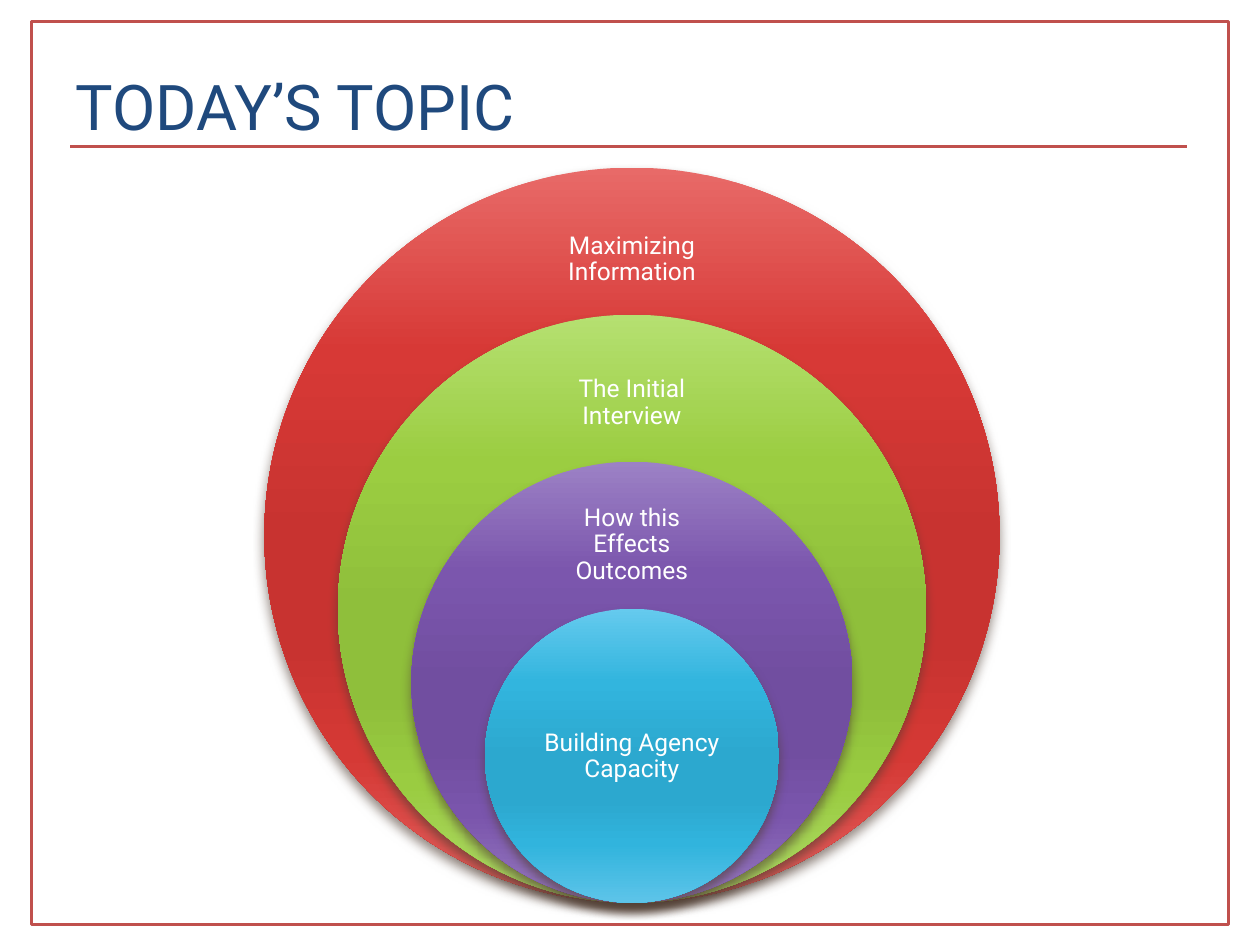
"""Build the "Today's topic" slide: four nested circles that share a base point."""
from dataclasses import dataclass

from lxml import etree
from pptx import Presentation
from pptx.dml import color
from pptx.enum import shapes, text
from pptx.oxml import ns
from pptx.util import Cm, Pt


@dataclass(frozen=True)
class Theme:
    """Colours, font and type sizes of the slide."""
    font: str = "Roboto"
    accent: str = "C0504D"
    heading: str = "1F497D"
    label: str = "FFFFFF"
    shade: str = "4E3B30"
    heading_size: int = 36
    label_size: int = 14
    stops: tuple = (0, 25, 50, 65, 80, 100)


def rgb(value):
    """Turn a hex value into a colour."""
    return color.RGBColor.from_string(value)


def assign(target, values):
    """Set every attribute in a dict of format values."""
    for name, value in values.items():
        setattr(target, name, value)


def child(parent, tag, **attributes):
    """Append a drawing element with its attributes."""
    return etree.SubElement(parent, ns.qn(tag), {key: str(value) for key, value in attributes.items()})


class TopicSlide:
    """Hold the theme and the current slide, and draw each kind of element."""

    def __init__(self, deck, theme):
        self.theme = theme
        self.slide = deck.slides.add_slide(deck.slide_layouts[5])

    def outline(self, target, width):
        """Give a shape or connector the accent line."""
        target.line.color.rgb = rgb(self.theme.accent)
        target.line.width = Pt(width)

    def fill_text(self, frame, words, size, ink, paragraph_format):
        """Put one formatted paragraph in a text frame."""
        assign(frame, {"word_wrap": True, "vertical_anchor": text.MSO_ANCHOR.MIDDLE})
        paragraph = frame.paragraphs[0]
        assign(paragraph, paragraph_format)
        run = paragraph.add_run()
        run.text = words
        assign(run.font, {"name": self.theme.font, "size": Pt(size)})
        run.font.color.rgb = rgb(ink)

    def title(self, words, left, top, width, height):
        """Place and fill the title placeholder."""
        heading = self.slide.shapes.title
        assign(heading, {"left": Cm(left), "top": Cm(top), "width": Cm(width), "height": Cm(height)})
        self.fill_text(heading.text_frame, words, self.theme.heading_size, self.theme.heading,
                       {"alignment": text.PP_ALIGN.LEFT})

    def rule(self, left, right, y):
        """Draw a horizontal line."""
        line = self.slide.shapes.add_connector(
            shapes.MSO_CONNECTOR.STRAIGHT, Cm(left), Cm(y), Cm(right), Cm(y))
        self.outline(line, 1.5)
        child(line.element.spPr, "a:effectLst")

    def border(self, left, top, width, height):
        """Draw the unfilled frame."""
        frame = self.slide.shapes.add_shape(
            shapes.MSO_SHAPE.RECTANGLE, Cm(left), Cm(top), Cm(width), Cm(height))
        frame.shadow.inherit = False
        frame.fill.background()
        self.outline(frame, 2)

    def circle(self, center, base, diameter, tints):
        """Draw a shaded circle standing on the base point."""
        disc = self.slide.shapes.add_shape(
            shapes.MSO_SHAPE.OVAL, Cm(center - diameter / 2), Cm(base - diameter),
            Cm(diameter), Cm(diameter))
        disc.line.fill.background()
        disc.fill.gradient()
        disc.fill.gradient_angle = 270
        properties = disc.element.spPr
        stops = properties.find(".//" + ns.qn("a:gsLst"))
        stops.clear()
        for position, tint in zip(self.theme.stops, tints):
            child(child(stops, "a:gs", pos=position * 1000), "a:srgbClr", val=tint)
        disc.shadow.inherit = False
        shadow = child(properties.find(ns.qn("a:effectLst")), "a:outerShdw",
                       blurRad=Pt(6), dist=Pt(4), dir=5400000, rotWithShape=0)
        child(child(shadow, "a:srgbClr", val=self.theme.shade), "a:alpha", val=60000)

    def label(self, words, center, top, width, height):
        """Place a centred label."""
        frame = self.slide.shapes.add_textbox(
            Cm(center - width / 2), Cm(top), Cm(width), Cm(height)).text_frame
        assign(frame, {f"margin_{side}": Cm(0.28) for side in ("left", "top", "right", "bottom")})
        self.fill_text(frame, words, self.theme.label_size, self.theme.label,
                       {"alignment": text.PP_ALIGN.CENTER, "line_spacing": 0.9})


def main():
    """Assemble and save the slide."""
    deck = Presentation()
    assign(deck, {"slide_width": Cm(25.4), "slide_height": Cm(19.05)})
    page = TopicSlide(deck, Theme())
    page.rule(1.42, 23.93, 2.95)
    page.border(0.64, 0.43, 24.13, 18.21)
    page.title("TODAY’S TOPIC", 1.27, 1.27, 17.15, 1.7)

    center, base, outer = 12.74, 18.2, 14.82
    rings = [
        ("Maximizing Information", (4.11, 4.14, 2.24),
         ("E86A68", "D73936", "C83330", "C83330", "D53935", "E26260")),
        ("The Initial Interview", (7.06, 4.14, 2.13),
         ("B5E071", "9BCD41", "8FBF3B", "8FBF3B", "9ACC41", "AFDA69")),
        ("How this Effects Outcomes", (9.98, 4.14, 2.01),
         ("9C81C5", "7B56AD", "714EA0", "714EA0", "7A55AC", "9679BF")),
        ("Building Agency Capacity", (13.77, 4.19, 2.97),
         ("65CAEE", "32B5DE", "2CA8CF", "2CA8CF", "31B4DD", "5DC4E9")),
    ]
    for level, (words, place, tints) in enumerate(rings):
        page.circle(center, base, outer * (1 - level / 5), tints)
        page.label(words, center, *place)

    deck.save("out.pptx")


if __name__ == "__main__":
    main()
